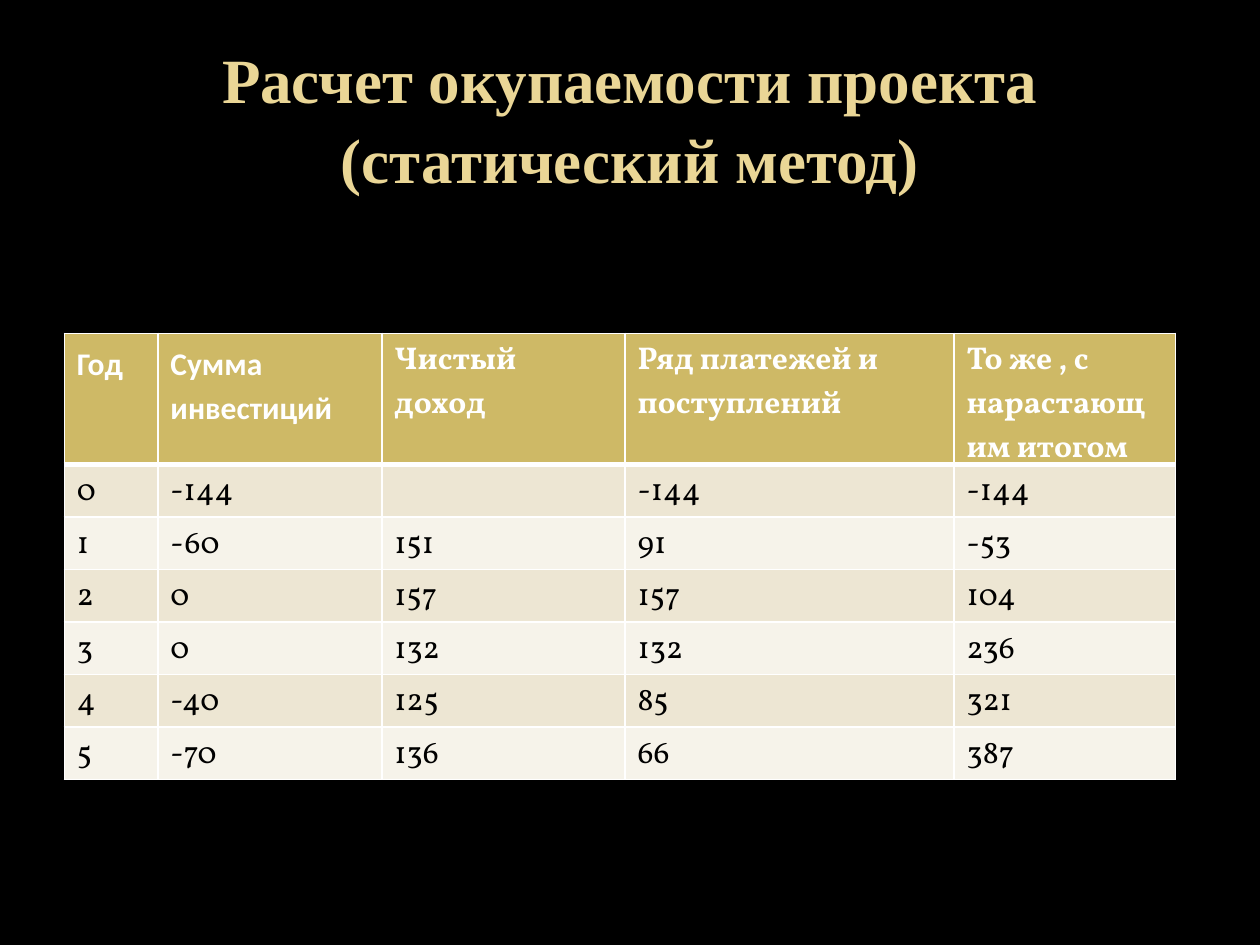
from pptx import Presentation
from pptx.dml.color import RGBColor
from pptx.enum.text import MSO_ANCHOR, PP_ALIGN
from pptx.oxml import parse_xml
from pptx.oxml.ns import nsdecls
from pptx.util import Pt

HEADS = ["Год", "Сумма инвестиций", "Чистый доход",
         "Ряд платежей и поступлений", "То же , с нарастающим итогом"]
ROWS = [
    ["0", "-144", "", "-144", "-144"],
    ["1", "-60", "151", "91", "-53"],
    ["2", "0", "157", "157", "104"],
    ["3", "0", "132", "132", "236"],
    ["4", "-40", "125", "85", "321"],
    ["5", "-70", "136", "66", "387"],
]
WIDTHS = [53.5, 128, 139, 188, 126.5]
HEAD_H, ROW_H = 75, 30


def paint(fill, color):
    fill.solid()
    fill.fore_color.rgb = RGBColor.from_string(color)


def write(par, text, font, size, color, bold):
    run = par.add_run()
    run.text = text
    run.font.name = font
    run.font.size = Pt(size)
    run.font.bold = bold
    paint(run.font.fill, color)


deck = Presentation()
deck.slide_width, deck.slide_height = Pt(720), Pt(540)
slide = deck.slides.add_slide(deck.slide_layouts[6])
paint(slide.background.fill, "000000")

# Title
title = slide.shapes.add_textbox(Pt(36), Pt(21.6), Pt(648), Pt(90)).text_frame
title.word_wrap = True
title.vertical_anchor = MSO_ANCHOR.MIDDLE
par = title.paragraphs[0]
par.alignment = PP_ALIGN.CENTER
par.line_spacing = 1.05
write(par, "Расчет окупаемости проекта (статический метод)",
      "Times New Roman", 36, "EAD696", True)

# Payback table
table = slide.shapes.add_table(
    len(ROWS) + 1, len(HEADS), Pt(36.75), Pt(190.5),
    Pt(sum(WIDTHS)), Pt(HEAD_H + ROW_H * len(ROWS))).table
for col, width in zip(table.columns, WIDTHS):
    col.width = Pt(width)

for r, texts in enumerate([HEADS] + ROWS):
    head = r == 0
    table.rows[r].height = Pt(HEAD_H if head else ROW_H)
    for c, text in enumerate(texts):
        cell = table.cell(r, c)
        props = cell._tc.get_or_add_tcPr()
        for side in "LRTB":
            thick = (head and side == "B") or (r == 1 and side == "T")
            props.append(parse_xml(
                f'<a:ln{side} {nsdecls("a")} w="{Pt(3 if thick else 1)}">'
                '<a:solidFill><a:srgbClr val="FFFFFF"/></a:solidFill>'
                f'</a:ln{side}>'))
        paint(cell.fill, "CEB966" if head else "EDE6D3" if r % 2 else "F6F3EA")
        par = cell.text_frame.paragraphs[0]
        plain = head and c < 2
        if plain:
            par.line_spacing = 1.15
        if text:
            write(par, text, "Calibri" if plain else "Vollkorn", 18,
                  "FFFFFF" if head else "000000", head)

deck.save("out.pptx")
